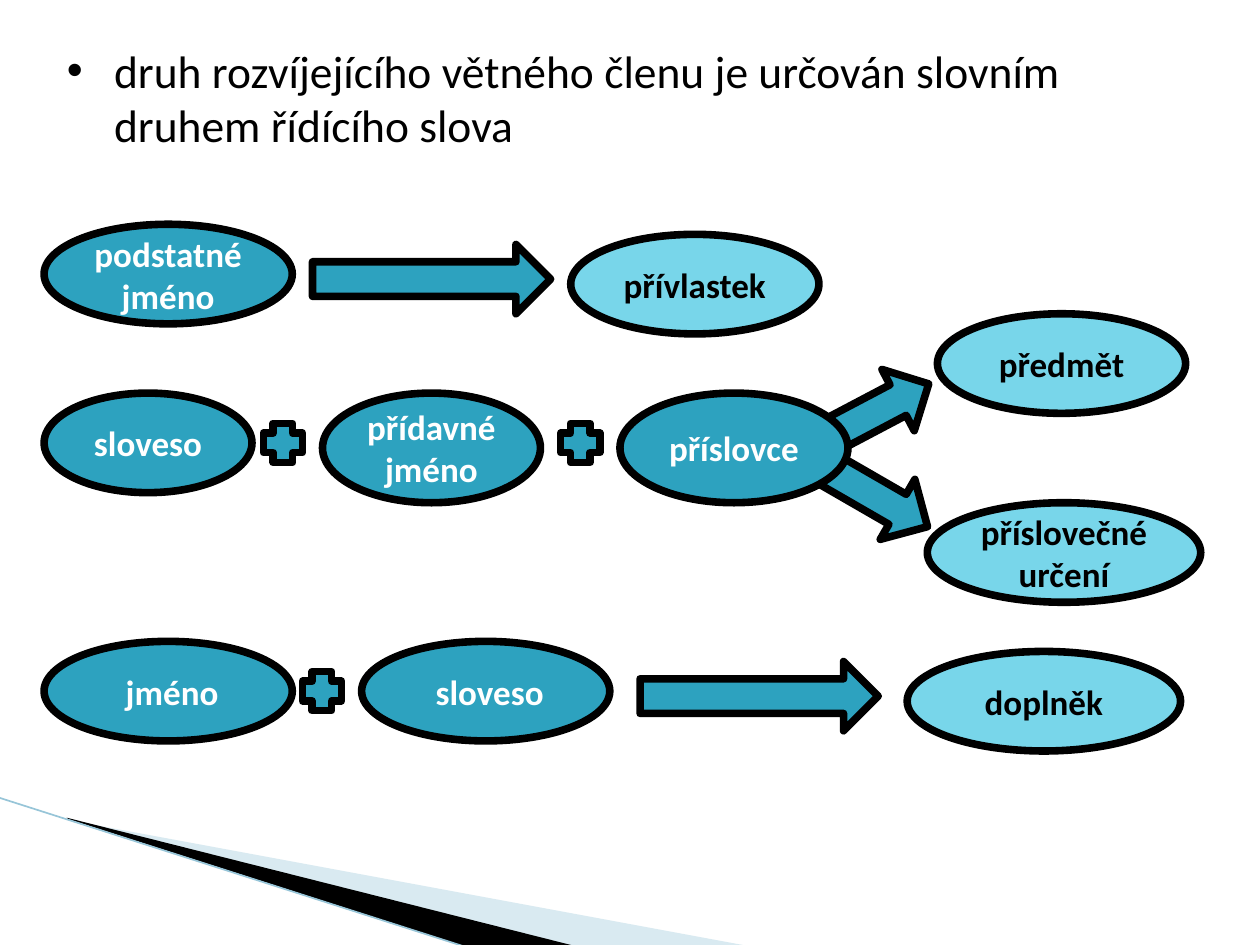
from lxml import etree
from pptx import Presentation
from pptx import util as u
from pptx.dml.color import RGBColor
from pptx.enum import shapes as s, text as t
from pptx.oxml import ns

COLORS = {"teal": "2DA2BF", "aqua": "78D6EA", "mist": "A0CBDC",
          "edge": "97C5D8", "black": "000000", "white": "FFFFFF"}
FONT = "Calibri"
NODE_HEIGHT = 0.79
ARROW_SIZE = (1.89, 0.55)
BRANCH_SIZE = (1.02, 0.55)
PLUS_SIZE = (0.31, 0.31)


def color(name):
    return RGBColor.from_string(COLORS[name])


def write(frame, words, size=20, ink="white", bold=False, align=None):
    frame.word_wrap = True
    frame.text = words
    paragraph = frame.paragraphs[0]
    paragraph.alignment = align
    paragraph.font.name = FONT
    paragraph.font.size = u.Pt(size)
    paragraph.font.bold = bold
    paragraph.font.color.rgb = color(ink)
    return paragraph


def add_figure(slide, kind, origin, offset, size, fill="teal", rotation=0):
    """Add an outlined shape at an offset from the origin of its region."""
    left, top = (a + b for a, b in zip(origin, offset))
    figure = slide.shapes.add_shape(
        kind, *(u.Inches(v) for v in (left, top, *size)))
    figure.shadow.inherit = False
    figure.rotation = rotation
    figure.fill.solid()
    figure.fill.fore_color.rgb = color(fill)
    figure.line.color.rgb = color("black")
    figure.line.width = u.Pt(4.33)
    return figure


def add_node(slide, words, origin, offset, width, height=NODE_HEIGHT, result=False):
    node = add_figure(slide, s.MSO_SHAPE.OVAL, origin, offset, (width, height),
                      fill="aqua" if result else "teal")
    node.text_frame.vertical_anchor = t.MSO_ANCHOR.MIDDLE
    write(node.text_frame, words, ink="black" if result else "white",
          bold=True, align=t.PP_ALIGN.CENTER)


def add_arrow(slide, origin, offset, size=ARROW_SIZE, rotation=0):
    add_figure(slide, s.MSO_SHAPE.RIGHT_ARROW, origin, offset, size, rotation=rotation)


def add_plus(slide, origin, offset):
    add_figure(slide, s.MSO_SHAPE.CROSS, origin, offset, PLUS_SIZE)


def add_wedge(slide, origin, points, fill, alpha=None):
    left, top = origin
    start, *rest = [(u.Inches(left + x), u.Inches(top + y)) for x, y in points]
    builder = slide.shapes.build_freeform(*start)
    builder.add_line_segments(rest, close=True)
    wedge = builder.convert_to_shape()
    wedge.shadow.inherit = False
    wedge.line.fill.background()
    wedge.fill.solid()
    wedge.fill.fore_color.rgb = color(fill)
    if alpha is not None:
        tint = wedge.fill._xPr.find(".//" + ns.qn("a:srgbClr"))
        etree.SubElement(tint, ns.qn("a:alpha"), val=str(alpha * 1000))


def add_corner(slide, left, top):
    origin = (left, top)
    add_wedge(slide, origin, [(0.55, 0.18), (5.95, 1.18), (4.56, 1.18), (0.55, 0.17)],
              "mist", alpha=40)
    add_wedge(slide, origin, [(0.53, 0.16), (4.57, 1.18), (3.72, 1.19), (0.54, 0.17)],
              "black")
    edge = slide.shapes.add_connector(
        s.MSO_CONNECTOR.STRAIGHT, u.Inches(left - 0.01), u.Inches(top),
        u.Inches(left + 3.71), u.Inches(top + 1.19))
    edge.line.color.rgb = color("edge")
    edge.line.width = u.Pt(0.95)
    etree.SubElement(edge._element.spPr, ns.qn("a:effectLst"))


def place_rule(body, left, top, width, height):
    body.left, body.top, body.width, body.height = (
        u.Inches(v) for v in (left, top, width, height))
    paragraph = body.text_frame.paragraphs[0]
    props = paragraph._p.get_or_add_pPr()
    props.set("marL", str(u.Inches(0.4)))
    props.set("indent", str(u.Inches(-0.28)))
    bullet_color = etree.SubElement(props, ns.qn("a:buClr"))
    etree.SubElement(bullet_color, ns.qn("a:srgbClr"), val=COLORS["teal"])
    etree.SubElement(props, ns.qn("a:buSzPct"), val="68000")
    etree.SubElement(props, ns.qn("a:buFont"), typeface="Arial")
    etree.SubElement(props, ns.qn("a:buChar"), char="▶")
    paragraph.space_before = u.Pt(0)
    write(body.text_frame,
          "druh rozvíjejícího větného členu je určován slovním druhem řídícího slova",
          size=26, ink="black")


def add_attribute_row(slide, left, top):
    origin = (left, top)
    add_node(slide, "podstatné jméno", origin, (0, 0), 1.97)
    add_arrow(slide, origin, (2.13, 0.16))
    add_node(slide, "přívlastek", origin, (4.18, 0.08), 1.97, result=True)


def add_object_row(slide, left, top):
    origin = (left, top)
    for drop, rotation in ((0.53, 30), (-0.11, 332.2)):
        add_arrow(slide, origin, (6.06, drop), BRANCH_SIZE, rotation)
    add_node(slide, "sloveso", origin, (0, 0), 1.65)
    for plus_left in (1.74, 4.1):
        add_plus(slide, origin, (plus_left, 0.24))
    add_node(slide, "přídavné jméno", origin, (2.21, 0), 1.73, 0.87)
    add_node(slide, "příslovce", origin, (4.57, 0), 1.81, 0.87)
    add_node(slide, "předmět", origin, (7.09, -0.63), 1.97, result=True)
    add_node(slide, "příslovečné\vurčení", origin, (7.01, 0.87), 2.17, result=True)


def add_complement_row(slide, left, top):
    origin = (left, top)
    add_node(slide, " jméno", origin, (0, 0), 1.97)
    add_node(slide, " sloveso", origin, (2.52, 0), 1.97)
    add_plus(slide, origin, (2.05, 0.24))
    add_arrow(slide, origin, (4.73, 0.16))
    add_node(slide, "doplněk", origin, (6.85, 0.08), 2.17, result=True)


def main():
    deck = Presentation()
    deck.slide_width, deck.slide_height = u.Inches(10), u.Inches(7.5)
    slide = deck.slides.add_slide(deck.slide_layouts[1])
    title = slide.shapes.title._element
    title.getparent().remove(title)
    place_rule(slide.placeholders[1], 0.43, 0.29, 9.07, 6.41)
    add_corner(slide, 0, 6.33)
    add_attribute_row(slide, 0.35, 1.78)
    add_object_row(slide, 0.35, 3.12)
    add_complement_row(slide, 0.35, 5.09)
    deck.save("out.pptx")


if __name__ == "__main__":
    main()
